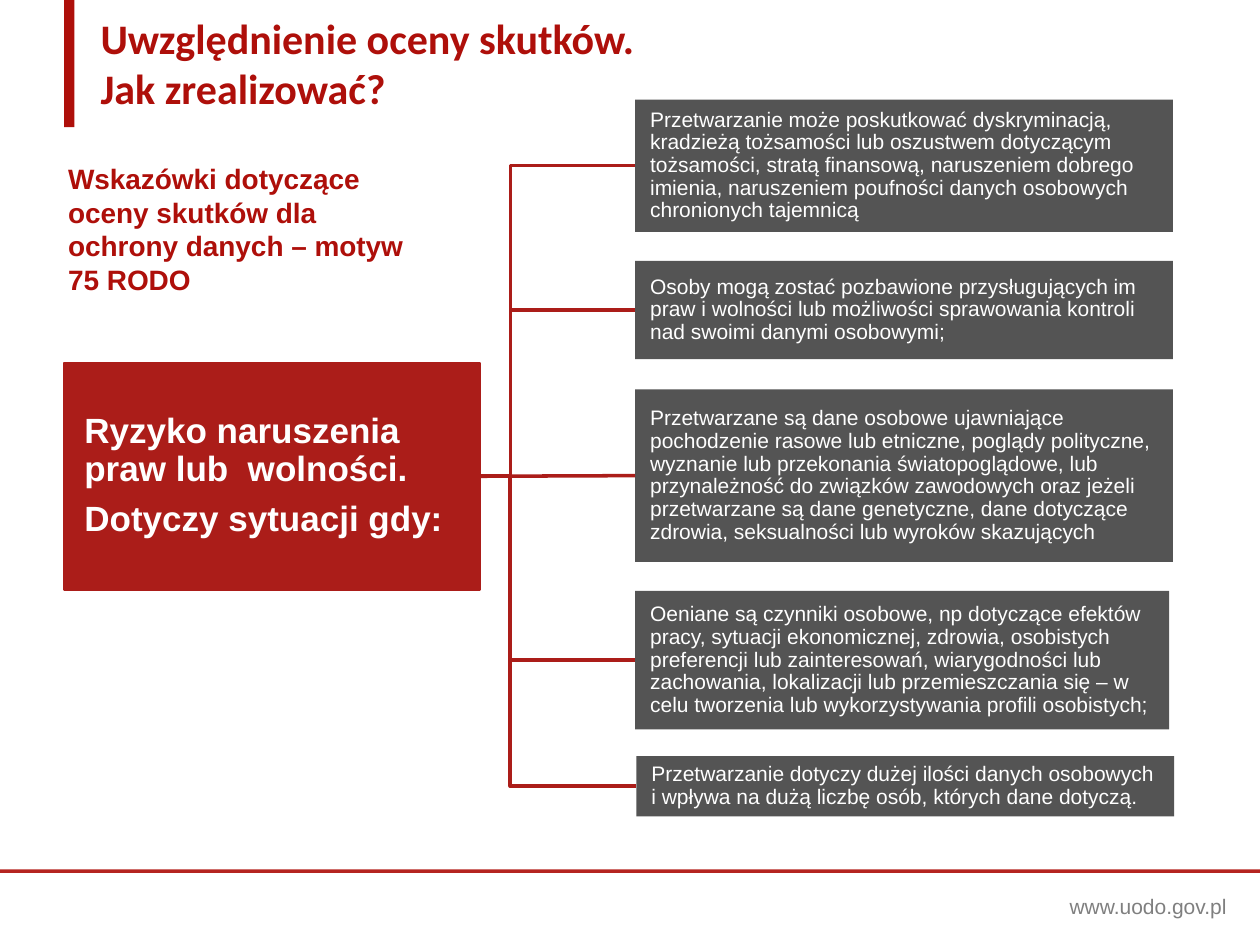
import pptx
import pptx.util
import pptx.dml.color
import pptx.enum.shapes
import pptx.enum.text
import pptx.oxml
import pptx.oxml.ns
from dataclasses import dataclass

Inches = pptx.util.Inches
Pt = pptx.util.Pt
Anchor = pptx.enum.text.MSO_ANCHOR


@dataclass(frozen=True)
class Theme:
    red: str = "AE0F0A"
    brick: str = "AB1D19"
    dark: str = "545454"
    grey: str = "7F7F7F"
    white: str = "FFFFFF"
    head: str = "Calibri"
    body: str = "Arial"
    title: int = 24
    lead: int = 20
    sub: int = 16
    small: int = 12


T = Theme()

RISK = (0.51, 2.88, 3.3, 1.8)
STEM, TRUNK = 3.05, 4.05

# Left, top, width, height and wording of each case
CASES = [
    (5.04, 0.79, 4.27, 1.05,
     "Przetwarzanie może poskutkować dyskryminacją, kradzieżą tożsamości lub "
     "oszustwem dotyczącym tożsamości, stratą finansową, naruszeniem dobrego "
     "imienia, naruszeniem poufności danych osobowych chronionych tajemnicą"),
    (5.04, 2.07, 4.27, 0.78,
     "Osoby mogą zostać pozbawione przysługujących im praw i wolności lub "
     "możliwości sprawowania kontroli nad swoimi danymi osobowymi;"),
    (5.04, 3.09, 4.27, 1.37,
     "Przetwarzane są dane osobowe ujawniające pochodzenie rasowe lub etniczne, "
     "poglądy polityczne, wyznanie lub przekonania światopoglądowe, lub "
     "przynależność do związków zawodowych oraz jeżeli przetwarzane są dane "
     "genetyczne, dane dotyczące zdrowia, seksualności lub wyroków skazujących"),
    (5.04, 4.69, 4.24, 1.1,
     "Oeniane są czynniki osobowe, np dotyczące efektów pracy, sytuacji "
     "ekonomicznej, zdrowia, osobistych preferencji lub zainteresowań, "
     "wiarygodności lub zachowania, lokalizacji lub przemieszczania się – w celu "
     "tworzenia lub wykorzystywania profili osobistych;"),
    (5.05, 6, 4.27, 0.48,
     "Przetwarzanie dotyczy dużej ilości danych osobowych i wpływa na dużą "
     "liczbę osób, których dane dotyczą."),
]


def tint(code):
    return pptx.dml.color.RGBColor.from_string(code)


def write(shape, text, size, color, font=T.body, bold=False, anchor=Anchor.TOP,
          pad=(0.1, 0.05, 0.1, 0.05), lead=None, after=0):
    """Fill a shape with one paragraph per line of text."""
    frame = shape.text_frame
    frame.word_wrap = True
    frame.vertical_anchor = anchor
    (frame.margin_left, frame.margin_top,
     frame.margin_right, frame.margin_bottom) = map(Inches, pad)
    lines = text.split("\n")
    for i, line in enumerate(lines):
        para = frame.add_paragraph() if i else frame.paragraphs[0]
        para.alignment = pptx.enum.text.PP_ALIGN.LEFT
        if lead:
            para.line_spacing = lead
        if after and i < len(lines) - 1:
            para.space_after = Pt(after)
        run = para.add_run()
        run.text = line
        run.font.name, run.font.size, run.font.bold = font, Pt(size), bold
        run.font.color.rgb = tint(color)


def label(slide, area, text, **style):
    box = slide.shapes.add_textbox(*map(Inches, area))
    write(box, text, **style)


def block(slide, area, fill, edge=None):
    kind = pptx.enum.shapes.MSO_SHAPE.RECTANGLE
    box = slide.shapes.add_shape(kind, *map(Inches, area))
    box.shadow.inherit = False
    box.fill.solid()
    box.fill.fore_color.rgb = tint(fill)
    if edge:
        box.line.color.rgb = tint(edge)
        box.line.width = Pt(1.25)
    else:
        box.line.fill.background()
    return box


def fade(shape, share):
    """Set the opacity of a solid fill, in percent."""
    color = shape.fill._xPr.find(".//" + pptx.oxml.ns.qn("a:srgbClr"))
    alpha = pptx.oxml.parse_xml(
        f'<a:alpha {pptx.oxml.ns.nsdecls("a")} val="{share * 1000}"/>')
    color.append(alpha)


def stroke(shape):
    shape.line.color.rgb = tint(T.brick)
    shape.line.width = Pt(2)


def branch(slide, start, end, right):
    """Draw a bent line by way of the trunk."""
    pen = slide.shapes.build_freeform(Inches(STEM), Inches(start))
    points = [(TRUNK, start), (TRUNK, end), (right, end)]
    pen.add_line_segments([(Inches(x), Inches(y)) for x, y in points], close=False)
    path = pen.convert_to_shape()
    path.shadow.inherit = False
    path.fill.background()
    stroke(path)


def link(slide, left, right):
    """Join the right side of one box to the left side of another."""
    kind = pptx.enum.shapes.MSO_CONNECTOR.STRAIGHT
    line = slide.shapes.add_connector(kind, 0, 0, 0, 0)
    line.begin_connect(left, 3)
    line.end_connect(right, 1)
    stroke(line)
    line._element.spPr.append(pptx.oxml.parse_xml(
        f'<a:effectLst {pptx.oxml.ns.nsdecls("a")}/>'))


def footer(slide):
    fade(block(slide, (0, 6.9, 10, 0.07), T.red), 91)
    block(slide, (0, 6.93, 10, 0.56), T.white)
    label(slide, (8.39, 7.04, 1.61, 0.3), "www.uodo.gov.pl",
          size=T.small, color=T.grey)


def tree(slide):
    mid = RISK[1] + RISK[3] / 2
    level = len(CASES) // 2

    # Bent branches lie behind the boxes
    for i, (left, top, _, height, _) in enumerate(CASES):
        if i != level:
            branch(slide, mid, top + height / 2, left)

    risk = block(slide, RISK, T.brick, edge=T.brick)
    write(risk, "Ryzyko naruszenia praw lub  wolności.\nDotyczy sytuacji gdy:",
          size=T.lead, color=T.white, bold=True, anchor=Anchor.MIDDLE,
          pad=(0.16, 0.01, 0.12, 0.01), lead=0.9, after=7)

    boxes = []
    for *area, text in CASES:
        box = block(slide, area, T.dark)
        write(box, text, size=T.small, color=T.white, anchor=Anchor.MIDDLE,
              pad=(0.12, 0.08, 0.12, 0.08), lead=0.9)
        boxes.append(box)
    link(slide, risk, boxes[level])


def main():
    deck = pptx.Presentation()
    deck.slide_width, deck.slide_height = Inches(10), Inches(7.5)
    slide = deck.slides.add_slide(deck.slide_layouts[6])

    footer(slide)

    # Lead-in and risk tree
    label(slide, (0.5, 1.23, 2.78, 1.16),
          "Wskazówki dotyczące oceny skutków dla ochrony danych – motyw 75 RODO",
          size=T.sub, color=T.red, bold=True, anchor=Anchor.BOTTOM, pad=(0.04,) * 4)
    tree(slide)

    # Title with its side bar
    label(slide, (0.7, 0.05, 6.74, 0.91),
          "Uwzględnienie oceny skutków.\nJak zrealizować?",
          size=T.title, color=T.red, font=T.head, bold=True)
    block(slide, (0.51, 0, 0.08, 1.01), T.red)

    deck.save("out.pptx")


if __name__ == "__main__":
    main()
